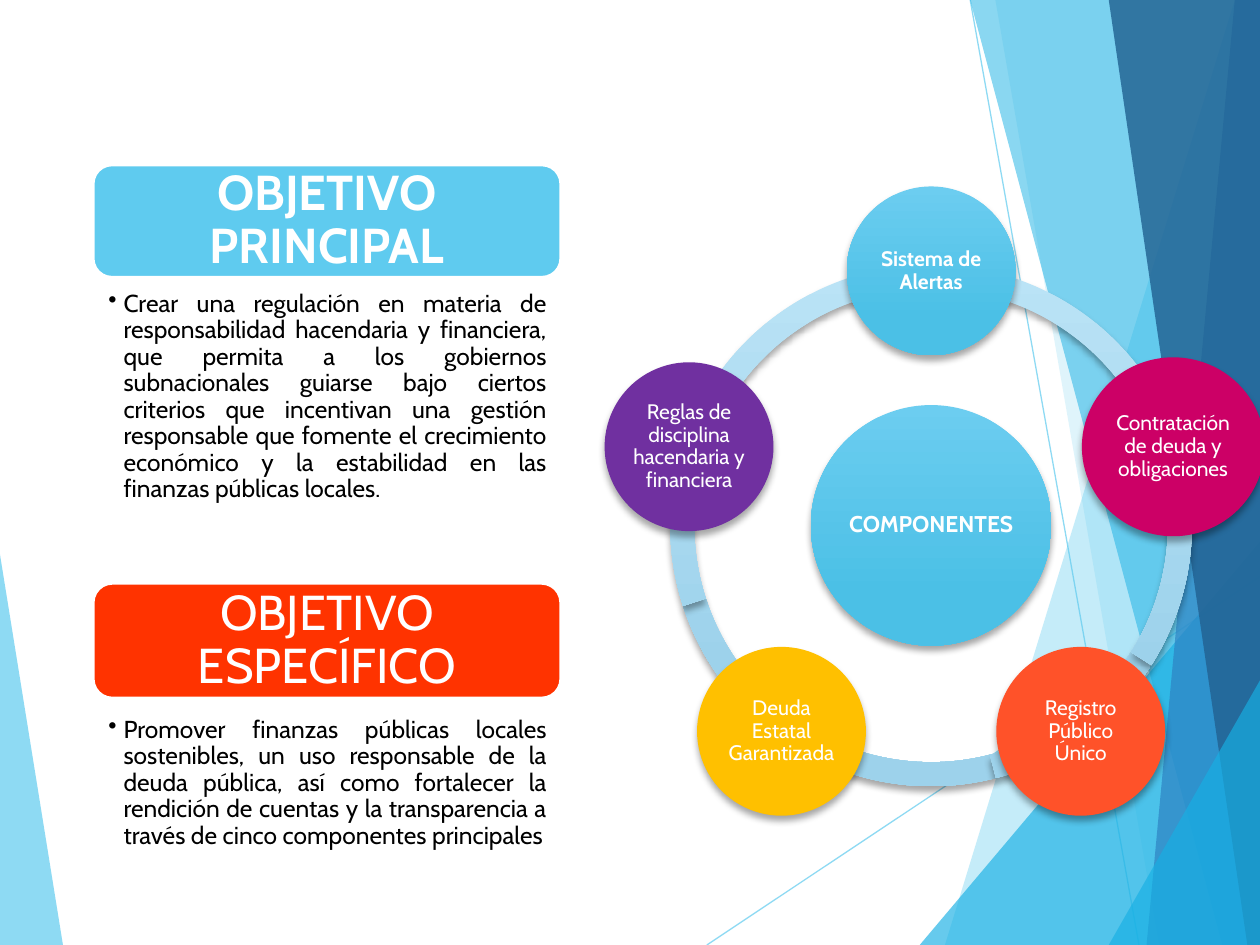
import math

import pptx
import pptx.dml.color
import pptx.enum.shapes
import pptx.enum.text
import pptx.oxml
import pptx.oxml.ns
import pptx.util
from lxml import etree

RGB = pptx.dml.color.RGBColor
KIND = pptx.enum.shapes.MSO_SHAPE
ALIGN = pptx.enum.text.PP_ALIGN
ANCHOR = pptx.enum.text.MSO_ANCHOR
qn = pptx.oxml.ns.qn

WHITE = RGB(0xFF, 0xFF, 0xFF)
BLACK = RGB(0x00, 0x00, 0x00)
SKY = RGB(0x5F, 0xCB, 0xEF)
CYAN = RGB(0x17, 0xB0, 0xE4)
BLUE = RGB(0x2E, 0x83, 0xC3)
NAVY = RGB(0x22, 0x62, 0x92)
RED = RGB(0xFF, 0x33, 0x00)
PINK = RGB(0xCC, 0x00, 0x66)
CORAL = RGB(0xFF, 0x52, 0x29)
GOLD = RGB(0xFF, 0xC0, 0x00)
PLUM = RGB(0x70, 0x30, 0xA0)
PALE = (RGB(0xBA, 0xE3, 0xF6), RGB(0x9D, 0xD2, 0xEB))
BRIGHT = (RGB(0x6C, 0xCD, 0xF0), RGB(0x4B, 0xC0, 0xE6))

# The slide is a grid of 100 columns by 75 rows of square cells.
COLS, ROWS = 100, 75
CELL = pptx.util.Inches(0.1)


def cells(*nums):
    return [round(n * CELL) for n in nums]


def fade(root, share):
    """Make the solid colour under root partly transparent."""
    tint = next(root.iter(qn("a:srgbClr")))
    etree.SubElement(tint, qn("a:alpha"), val=str(share * 1000))


class Deck:
    font = "Cabin"
    pad = 0.2

    def __init__(self):
        self.file = pptx.Presentation()
        self.file.slide_width, self.file.slide_height = cells(COLS, ROWS)
        self.slide = self.file.slides.add_slide(self.file.slide_layouts[6])
        self.shapes = self.slide.shapes

    def facet(self, points, color, share):
        pen = self.shapes.build_freeform(*points[0], scale=CELL)
        pen.add_line_segments(points[1:], close=True)
        shape = pen.convert_to_shape()
        shape.shadow.inherit = False
        shape.fill.solid()
        shape.fill.fore_color.rgb = color
        shape.line.fill.background()
        fade(shape._element.spPr, share)

    def ray(self, start, end):
        line = self.shapes.add_connector(
            pptx.enum.shapes.MSO_CONNECTOR.STRAIGHT, *cells(*start, *end))
        line.line.color.rgb = SKY
        line.line.width = pptx.util.Pt(0.75)
        fade(line._element.spPr, 70)
        etree.SubElement(line._element.spPr, qn("a:effectLst"))

    def form(self, kind, box, paint, edge=None, shade=True):
        """Add a preset shape; a pair of colours paints a gradient."""
        shape = self.shapes.add_shape(kind, *cells(*box))
        if isinstance(paint, RGB):
            shape.fill.solid()
            shape.fill.fore_color.rgb = paint
        else:
            shape.fill.gradient()
            shape.fill.gradient_angle = 270
            stops = shape.fill.gradient_stops
            for stop, color, place in zip(stops, paint, (0, 0.78)):
                stop.color.rgb = color
                stop.position = place
        if edge is None:
            shape.line.fill.background()
        else:
            shape.line.color.rgb = edge
            shape.line.width = pptx.util.Pt(1.5)
        shape.shadow.inherit = False
        if shade:
            self.shade(shape)
        return shape

    def shade(self, shape):
        glow = etree.SubElement(
            shape._element.spPr.find(qn("a:effectLst")), qn("a:outerShdw"),
            blurRad=str(pptx.util.Pt(4)), dist=str(pptx.util.Pt(3)),
            dir="5400000", rotWithShape="0")
        etree.SubElement(glow, qn("a:srgbClr"), val=str(BLACK))
        fade(glow, 35)

    def text(self, box, words, size, color=WHITE, bold=False,
             pads=(pad,) * 4, align=ALIGN.CENTER, anchor=ANCHOR.MIDDLE):
        frame = self.shapes.add_textbox(*cells(*box)).text_frame
        frame.word_wrap = True
        frame.vertical_anchor = anchor
        (frame.margin_left, frame.margin_top,
         frame.margin_right, frame.margin_bottom) = cells(*pads)
        para = frame.paragraphs[0]
        para.alignment = align
        para.line_spacing = 0.9
        run = para.add_run()
        run.text = words
        run.font.name = self.font
        run.font.size = pptx.util.Pt(size)
        run.font.bold = bold
        run.font.color.rgb = color
        return para

    def disc(self, x, y, wide, high, paint, words, size, bold=False):
        """Add a circle centred on x, y with text in its inner square."""
        def around(w, h):
            return x - w / 2, y - h / 2, w, h

        self.form(KIND.OVAL, around(wide, high), paint)
        inner = math.sqrt(0.5)
        self.text(around(wide * inner, high * inner), words, size, bold=bold)

    def head(self, top, high, paint, words, bold):
        self.form(KIND.ROUNDED_RECTANGLE, (7.4, top, 37.1, high), paint,
                  edge=WHITE, shade=False)
        self.text((7.8, top + 0.4, 36.3, high - 0.8), words, 28, bold=bold,
                  pads=(1.2,) * 4)

    def bullet(self, top, high, words):
        para = self.text((7.4, top, 37.1, high), words, 14, BLACK,
                         pads=(1.2, self.pad, 1.1, self.pad),
                         align=ALIGN.JUSTIFY, anchor=ANCHOR.TOP)
        para.level = 1
        props = para._p.get_or_add_pPr()
        indent = pptx.util.Inches(0.12)
        props.set("marL", str(indent))
        props.set("indent", str(-indent))
        etree.SubElement(props, qn("a:buChar"), char="•")


def backdrop(deck):
    deck.facet([(-0.1, 43.9), (4.9, 75.1), (-0.1, 75)], SKY, 70)
    deck.ray((56.1, 75), (100.1, 45.7))
    deck.ray((77, 0), (90.4, 75))
    for points, color, share in (
        ([(97.5, 0), (75.4, 75), (100.2, 75.1), (100.1, 0.1)], SKY, 36),
        ([(78.8, -0.1), (91.9, 75), (100.1, 75), (100.1, -0.1)], SKY, 20),
        ([(72.6, 75), (100, 42.9), (100.1, 75)], CYAN, 66),
        ([(76.7, -0.1), (97, 75), (100.1, 74.9), (100.1, -0.1)], CYAN, 50),
        ([(98.1, -0.1), (90.7, 75), (100.1, 75), (100, -0.1)], BLUE, 70),
        ([(88.5, -0.1), (98.8, 75), (100.2, 75), (100, -0.1)], NAVY, 82),
        ([(88.2, 75), (100.2, 53.5), (100.2, 74.9)], CYAN, 66),
    ):
        deck.facet(points, color, share)


def wheel(deck):
    x, y, ring, reach = 73.9, 41.7, 41.4, 20.2
    ends = [32.4 + 43.2 * i for i in range(5)]
    for i in (2, 1, 0, 4, 3):
        arc = deck.form(KIND.BLOCK_ARC,
                        (x - ring / 2, y - ring / 2, ring, ring), PALE)
        # Angles are stored in 60000ths of a degree, scaled by 100000.
        arc.adjustments[0] = ends[i] * 0.6
        arc.adjustments[1] = ends[(i + 1) % 5] * 0.6
        arc.adjustments[2] = 0.046
    deck.disc(x, y, 19.1, 19.1, BRIGHT, "COMPONENTES", 13, True)
    nodes = (
        ("Sistema de Alertas", BRIGHT, 13.4, 13.4),
        ("Contratación de deuda y obligaciones", PINK, 14.5, 14.2),
        ("Registro Público Único", CORAL, 13.4, 13.4),
        ("Deuda Estatal Garantizada", GOLD, 13.4, 13.4),
        ("Reglas de disciplina hacendaria y financiera", PLUM, 13.4, 13.4),
    )
    for i, (words, paint, wide, high) in enumerate(nodes):
        turn = math.tau * i / len(nodes)
        deck.disc(x + reach * math.sin(turn), y - reach * math.cos(turn),
                  wide, high, paint, words, 12, bold=i == 0)


def goals(deck):
    deck.head(13.1, 8.9, SKY, "OBJETIVO PRINCIPAL", True)
    deck.bullet(22.9, 18.8, (
        "Crear una regulación en materia de responsabilidad hacendaria y "
        "financiera, que permita a los gobiernos subnacionales guiarse bajo "
        "ciertos criterios que incentivan una gestión responsable que fomente "
        "el crecimiento económico y la estabilidad en las finanzas públicas "
        "locales."))
    deck.head(46.3, 9.1, RED, "OBJETIVO ESPECÍFICO", False)
    deck.bullet(56.7, 12.7, (
        "Promover finanzas públicas locales sostenibles, un uso responsable "
        "de la deuda pública, así como fortalecer la rendición de cuentas y "
        "la transparencia a través de cinco componentes principales"))


def main():
    deck = Deck()
    backdrop(deck)
    wheel(deck)
    goals(deck)
    deck.file.save("out.pptx")


if __name__ == "__main__":
    main()
